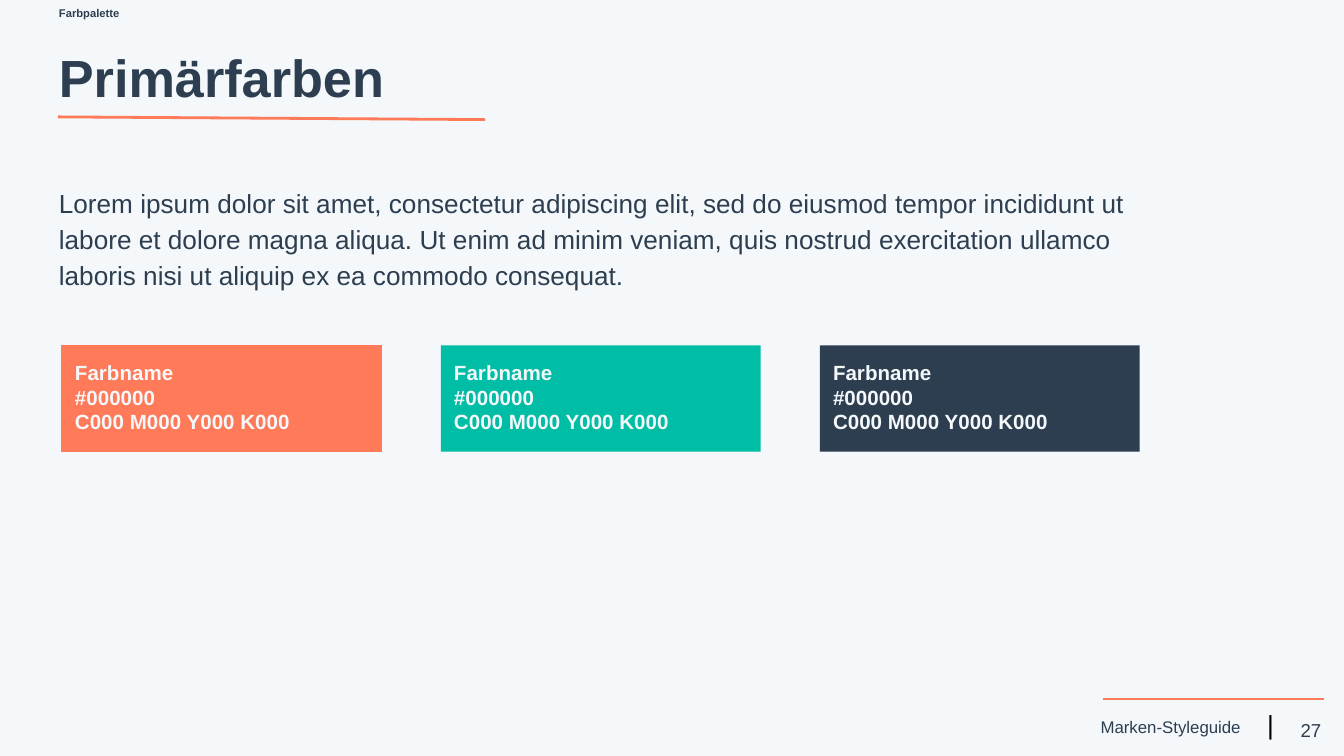
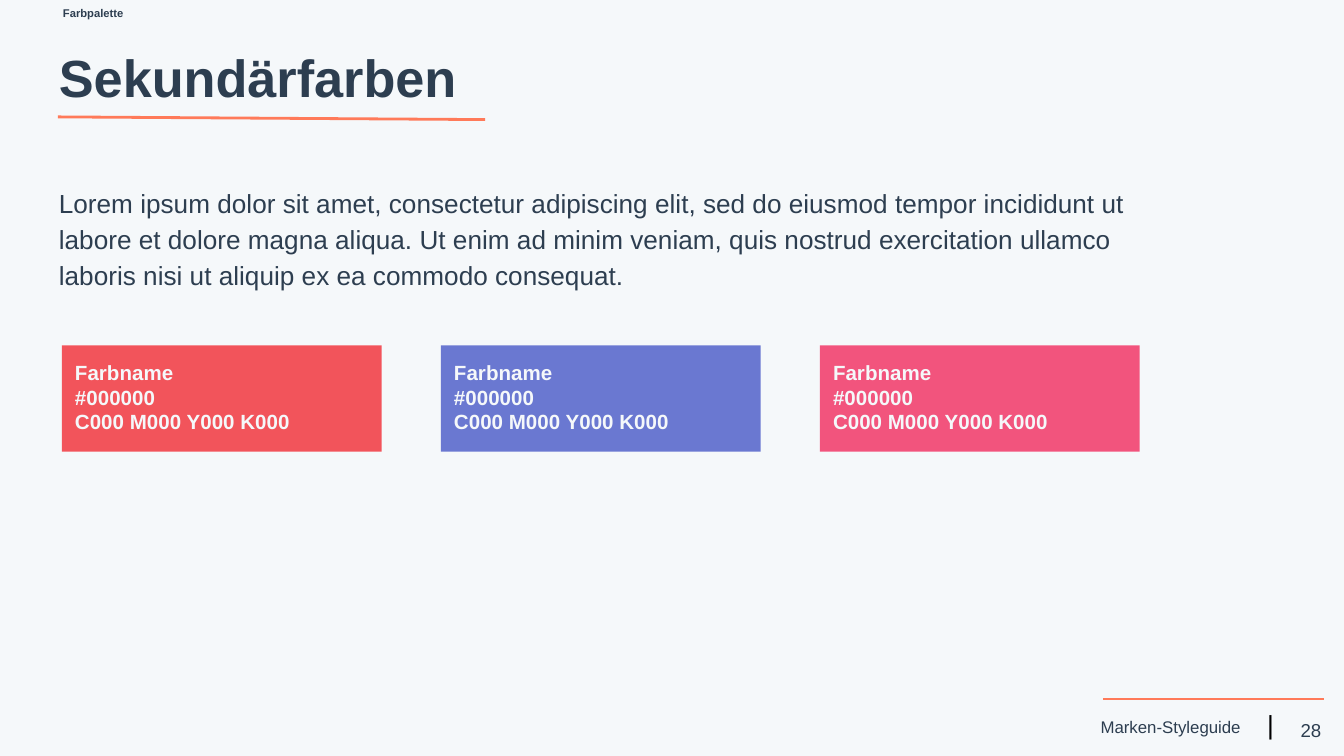
from dataclasses import dataclass

import pptx
import pptx.dml.color
import pptx.enum.shapes
import pptx.enum.text
import pptx.oxml.ns
import pptx.slide
import pptx.util
from lxml import etree

RGBColor = pptx.dml.color.RGBColor
PP_ALIGN = pptx.enum.text.PP_ALIGN
MSO_ANCHOR = pptx.enum.text.MSO_ANCHOR
Pt = pptx.util.Pt

PAPER = RGBColor(0xF5, 0xF8, 0xFA)
INK = RGBColor(0x2D, 0x3E, 0x50)
BLACK = RGBColor(0, 0, 0)
ORANGE = RGBColor(0xFF, 0x7A, 0x59)
TEAL = RGBColor(0x00, 0xBD, 0xA5)
RED = RGBColor(0xF2, 0x54, 0x5B)
VIOLET = RGBColor(0x6A, 0x78, 0xD1)
PINK = RGBColor(0xF2, 0x54, 0x7D)

FONT = "Arial"
UNIT = pptx.util.Inches(0.1)  # one grid column or row
COLUMNS, ROWS = 100, 56.25
MARGIN = 3.4
SWATCH_LEFT, SWATCH_TOP, SWATCH_PITCH = 4.6, 25.7, 28.2

BODY = (
    "Lorem ipsum dolor sit amet, consectetur adipiscing elit, sed do eiusmod "
    "tempor incididunt ut labore et dolore magna aliqua. Ut enim ad minim veniam, "
    "quis nostrud exercitation ullamco laboris nisi ut aliquip ex ea commodo consequat."
)
SWATCH_TEXT = ("Farbname", "#000000", "C000 M000 Y000 K000")


@dataclass(frozen=True)
class Box:
    """A rectangle in grid columns and rows."""
    left: float
    top: float
    width: float
    height: float

    def emu(self) -> list[int]:
        return [grid(v) for v in (self.left, self.top, self.width, self.height)]


@dataclass(frozen=True)
class Style:
    size: float
    color: RGBColor = INK
    bold: bool = False
    align: PP_ALIGN = PP_ALIGN.LEFT
    anchor: MSO_ANCHOR = MSO_ANCHOR.TOP
    line_spacing: float = 1.0
    space_after: float = 0


@dataclass(frozen=True)
class Swatch:
    fill: RGBColor
    outlined: bool = False


@dataclass(frozen=True)
class Page:
    number: int
    title: str
    swatches: tuple[Swatch, ...]
    section_left: float = MARGIN


SECTION = Style(6, bold=True)
TITLE = Style(28, bold=True)
COPY = Style(14, line_spacing=1.15, space_after=16)
LABEL = Style(11, PAPER, bold=True)
FOOTER = Style(9, anchor=MSO_ANCHOR.MIDDLE)
DIVIDER = Style(14, BLACK)
NUMBER = Style(10, align=PP_ALIGN.RIGHT, anchor=MSO_ANCHOR.MIDDLE)

PAGES = (
    Page(27, "Primärfarben", (Swatch(ORANGE, outlined=True), Swatch(TEAL), Swatch(INK))),
    Page(28, "Sekundärfarben", (Swatch(RED), Swatch(VIOLET), Swatch(PINK)), section_left=3.7),
)


def grid(value: float) -> int:
    return round(value * UNIT)


def add_text(slide: pptx.slide.Slide, box: Box, style: Style, *lines: str) -> None:
    tf = slide.shapes.add_textbox(*box.emu()).text_frame
    tf.word_wrap = True
    tf.vertical_anchor = style.anchor
    tf.margin_left = tf.margin_top = tf.margin_right = tf.margin_bottom = UNIT
    for i, line in enumerate(lines):
        p = tf.paragraphs[0] if i == 0 else tf.add_paragraph()
        p.text = line
        p.alignment = style.align
        p.line_spacing = style.line_spacing
        p.space_after = Pt(style.space_after)
        p.font.name = FONT
        p.font.size = Pt(style.size)
        p.font.bold = style.bold
        p.font.color.rgb = style.color


def add_rule(slide: pptx.slide.Slide, start: tuple[float, float],
             end: tuple[float, float], weight: float) -> None:
    line = slide.shapes.add_connector(
        pptx.enum.shapes.MSO_CONNECTOR.STRAIGHT, *map(grid, start + end))
    line.line.color.rgb = ORANGE
    line.line.width = Pt(weight)
    etree.SubElement(line._element.spPr, pptx.oxml.ns.qn("a:effectLst"))


def add_swatch(slide: pptx.slide.Slide, swatch: Swatch, index: int) -> None:
    left = SWATCH_LEFT + index * SWATCH_PITCH
    sp = slide.shapes.add_shape(
        pptx.enum.shapes.MSO_SHAPE.RECTANGLE, *Box(left, SWATCH_TOP, 23.8, 7.9).emu())
    sp.shadow.inherit = False
    sp.fill.solid()
    sp.fill.fore_color.rgb = swatch.fill
    if swatch.outlined:
        sp.line.color.rgb = swatch.fill
        sp.line.width = Pt(0.75)
    else:
        sp.line.fill.background()
    add_text(slide, Box(left, SWATCH_TOP + 0.1, 24.4, 4.3), LABEL, *SWATCH_TEXT)


def add_frame(slide: pptx.slide.Slide, page: Page) -> None:
    """Draw the header and footer that every slide carries."""
    add_text(slide, Box(80.9, 52.2, 15.2, 3.7), FOOTER, "Marken-Styleguide")
    add_text(slide, Box(93.3, 51.7, 2.9, 3.7), DIVIDER, "|")
    add_rule(slide, (82.1, 52), (98.5, 52), 0.75)
    add_rule(slide, (4.3, 8.7), (36.1, 8.9), 1.5)
    add_text(slide, Box(MARGIN, 2.4, 93.2, 6.3), TITLE, page.title)
    add_text(slide, Box(93.3, 52.2, 6, 4.3), NUMBER, str(page.number))
    add_text(slide, Box(page.section_left, 0, 22.2, 2.4), SECTION, "Farbpalette")


def main() -> None:
    prs = pptx.Presentation()
    prs.slide_width, prs.slide_height = grid(COLUMNS), grid(ROWS)
    for page in PAGES:
        slide = prs.slides.add_slide(prs.slide_layouts[6])
        slide.background.fill.solid()
        slide.background.fill.fore_color.rgb = PAPER
        add_frame(slide, page)
        add_text(slide, Box(MARGIN, 12.6, 81.4, 9.7), COPY, BODY)
        for i, swatch in enumerate(page.swatches):
            add_swatch(slide, swatch, i)
    prs.save("out.pptx")


if __name__ == "__main__":
    main()
